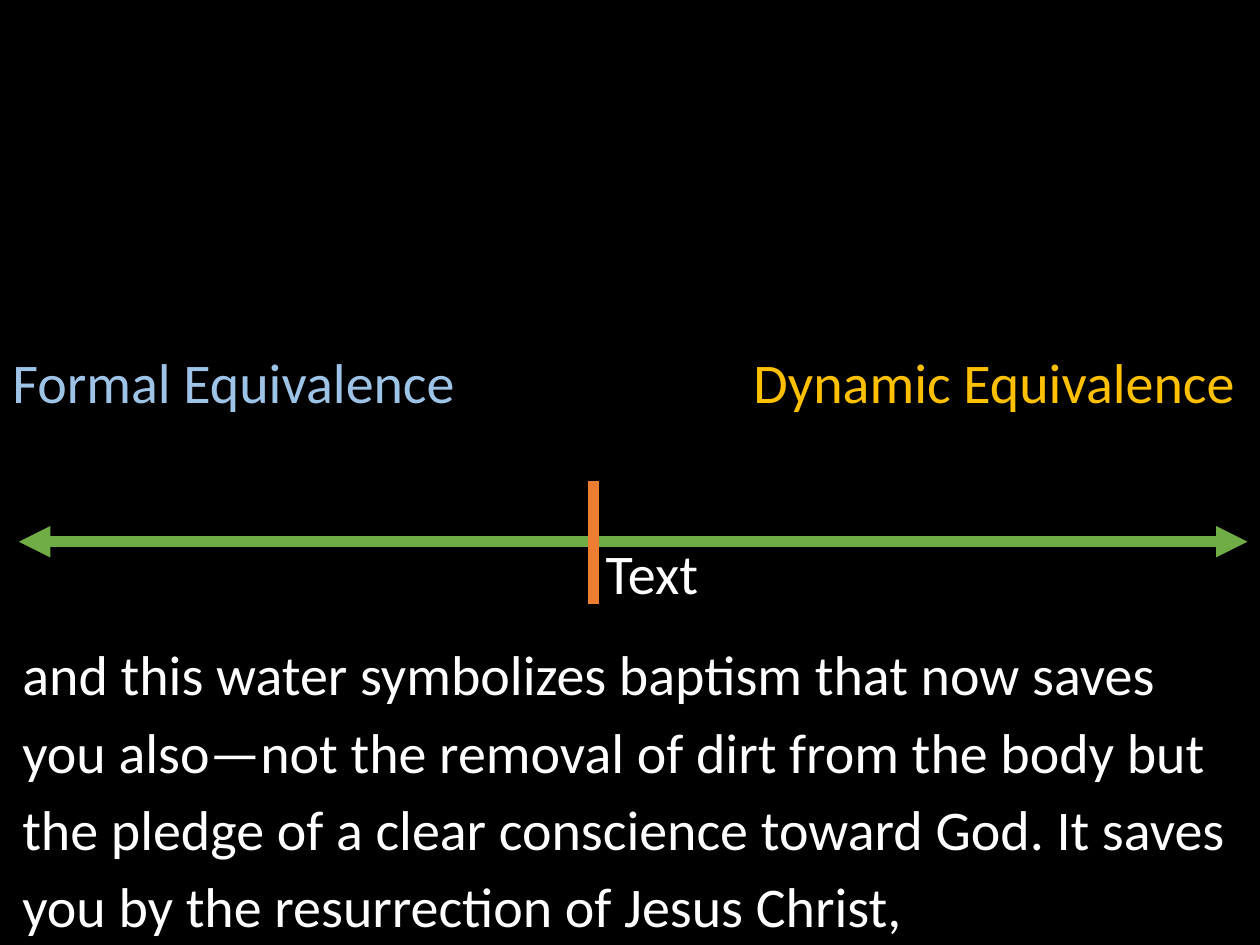
from lxml.etree import SubElement
from pptx import Presentation
from pptx.dml.color import RGBColor
from pptx.enum.shapes import MSO_CONNECTOR
from pptx.oxml.ns import qn
from pptx.util import Cm, Pt

BLACK = RGBColor(0x00, 0x00, 0x00)
WHITE = RGBColor(0xFF, 0xFF, 0xFF)
BLUE = RGBColor(0x9D, 0xC3, 0xE6)
GOLD = RGBColor(0xFF, 0xC0, 0x00)
GREEN = RGBColor(0x70, 0xAD, 0x47)
ORANGE = RGBColor(0xED, 0x7D, 0x31)

VERSE = (
    "and this water symbolizes baptism that now saves you also—not the removal "
    "of dirt from the body but the pledge of a clear conscience toward God. "
    "It saves you by the resurrection of Jesus Christ,"
)

SCALE_Y = 10.92
MARKER_X = 11.96
LABEL_TOP, LABEL_HEIGHT = 6.88, 1.63

# text, colour, left, top, width, height (cm)
LABELS = [
    ("Formal Equivalence", BLUE, 0, LABEL_TOP, 9.83, LABEL_HEIGHT),
    ("Dynamic Equivalence", GOLD, 14.94, LABEL_TOP, 10.24, LABEL_HEIGHT),
    ("Text", WHITE, MARKER_X, 10.74, 5.16, LABEL_HEIGHT),
]

# colour, start, end (cm), arrowheads at both ends
LINES = [
    (GREEN, (0.38, SCALE_Y), (25.15, SCALE_Y), True),
    (ORANGE, (MARKER_X, 9.7), (MARKER_X, 12.17), False),
]


def add_text(slide, text, color, left, top, width, height):
    frame = slide.shapes.add_textbox(Cm(left), Cm(top), Cm(width), Cm(height)).text_frame
    frame.word_wrap = True
    paragraph = frame.paragraphs[0]
    run = paragraph.add_run()
    run.text = text
    run.font.name = "Calibri"
    run.font.size = Pt(32)
    run.font.color.rgb = color
    return paragraph


def add_line(slide, color, start, end, arrowheads):
    connector = slide.shapes.add_connector(
        MSO_CONNECTOR.STRAIGHT, *(Cm(value) for value in start + end)
    )
    connector.line.color.rgb = color
    connector.line.width = Pt(6)
    if arrowheads:
        outline = connector.line._get_or_add_ln()
        for tag in ("a:headEnd", "a:tailEnd"):
            SubElement(outline, qn(tag), type="triangle")
    SubElement(connector._element.spPr, qn("a:effectLst"))


def main():
    presentation = Presentation()
    presentation.slide_width, presentation.slide_height = Cm(25.4), Cm(19.05)
    slide = presentation.slides.add_slide(presentation.slide_layouts[6])
    slide.background.fill.solid()
    slide.background.fill.fore_color.rgb = BLACK

    for line in LINES:
        add_line(slide, *line)
    for label in LABELS:
        add_text(slide, *label)

    verse = add_text(slide, VERSE, WHITE, 0.2, 12.57, 25.02, 6.45)
    verse.line_spacing = 1.15
    verse.space_after = Pt(10)

    presentation.save("out.pptx")


if __name__ == "__main__":
    main()
